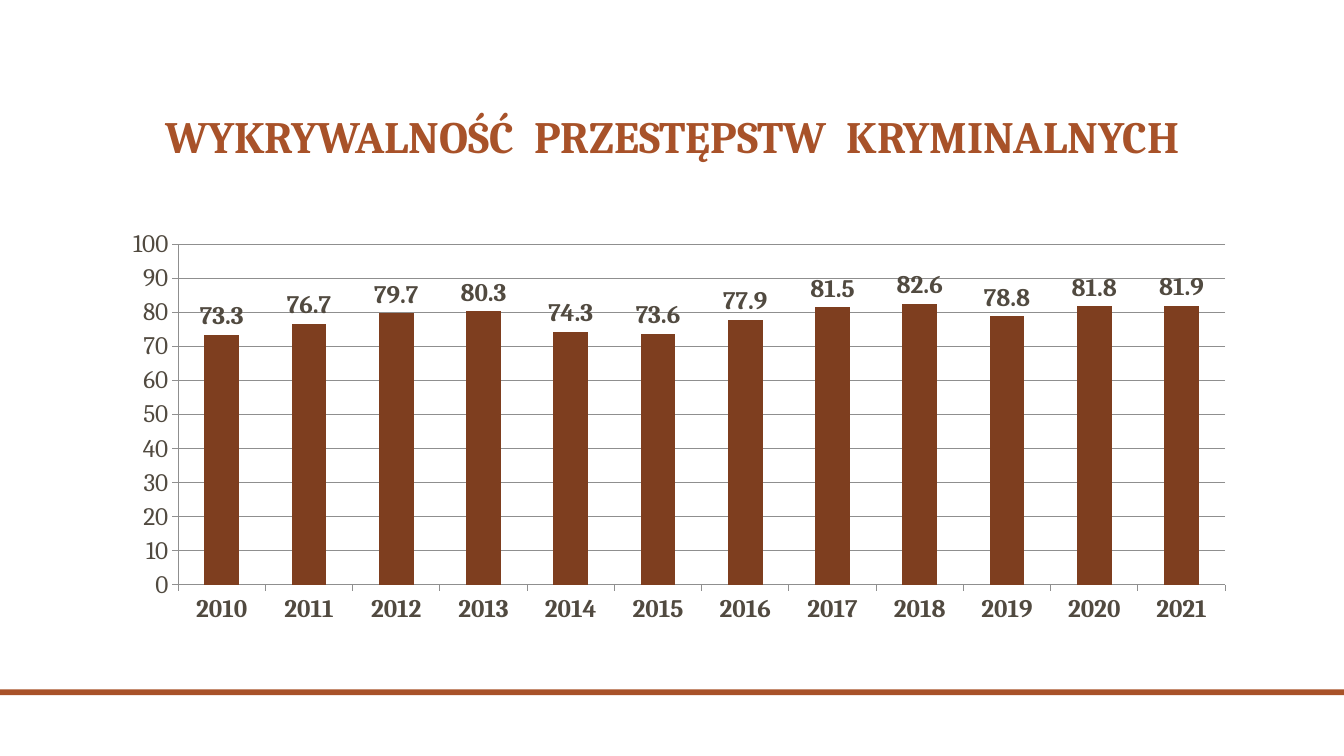
"""Build a slide with a column chart of crime detection rates by year."""
import dataclasses

import pptx
import pptx.chart.data
import pptx.dml.color
import pptx.enum.chart
import pptx.enum.shapes
import pptx.enum.text
import pptx.oxml
import pptx.oxml.ns
import pptx.util

Cm = pptx.util.Cm


@dataclasses.dataclass(frozen=True)
class Theme:
    accent: str = "A85229"
    column: str = "7E3E1F"
    text: str = "514A40"
    grid: str = "8F8F8F"
    font: str = "Cambria"
    title_size: int = 32
    chart_size: int = 18
    word_gap: int = 7


class SlideBuilder:
    def __init__(self, page, theme):
        self.page = page
        self.theme = theme

    def style(self, font, size, color, bold=False):
        font.name = self.theme.font
        font.size = pptx.util.Pt(size)
        font.bold = bold
        font.color.rgb = pptx.dml.color.RGBColor.from_string(color)

    def fill(self, target, color):
        target.fill.solid()
        target.fill.fore_color.rgb = pptx.dml.color.RGBColor.from_string(color)

    def band(self, left, top, width, height):
        band = self.page.shapes.add_shape(
            pptx.enum.shapes.MSO_SHAPE.RECTANGLE,
            Cm(left), Cm(top), Cm(width), Cm(height))
        band.shadow.inherit = False
        self.fill(band, self.theme.accent)
        band.line.fill.background()

    def title(self, words, left, top, width, height):
        box = self.page.shapes.add_textbox(Cm(left), Cm(top), Cm(width), Cm(height))
        frame = box.text_frame
        frame.word_wrap = True
        frame.vertical_anchor = pptx.enum.text.MSO_ANCHOR.BOTTOM
        para = frame.paragraphs[0]
        para.alignment = pptx.enum.text.PP_ALIGN.CENTER
        para.line_spacing = 0.9
        for index, word in enumerate(words):
            for text in ([" ", word] if index else [word]):
                span = para.add_run()
                span.text = text
                self.style(span.font, self.theme.title_size, self.theme.accent, True)
                if text == " ":
                    properties = span.font._element
                    properties.set("spc", str(self.theme.word_gap * 100))

    def axis_line(self, line):
        line.color.rgb = pptx.dml.color.RGBColor.from_string(self.theme.grid)
        line.width = pptx.util.Pt(0.75)

    def place_plot(self, chart, left, top, width, height):
        plot_area = chart.element.xpath("c:chart/c:plotArea")[0]
        for layout in plot_area.xpath("c:layout"):
            plot_area.remove(layout)
        sizes = {"x": left, "y": top, "w": width, "h": height}
        parts = '<c:layoutTarget val="inner"/><c:xMode val="edge"/><c:yMode val="edge"/>'
        parts += "".join(f'<c:{key} val="{value}"/>' for key, value in sizes.items())
        plot_area.insert(0, pptx.oxml.parse_xml(
            f'<c:layout {pptx.oxml.ns.nsdecls("c")}>'
            f"<c:manualLayout>{parts}</c:manualLayout></c:layout>"))

    def column_chart(self, rates, left, top, width, height):
        theme = self.theme
        data = pptx.chart.data.CategoryChartData(number_format="0.0")
        data.categories = list(rates)
        data.add_series("Series 1", list(rates.values()))
        chart = self.page.shapes.add_chart(
            pptx.enum.chart.XL_CHART_TYPE.COLUMN_CLUSTERED,
            Cm(left), Cm(top), Cm(width), Cm(height), data).chart
        chart.has_title = False
        chart.has_legend = False
        self.style(chart.font, theme.chart_size, theme.text)
        self.place_plot(chart, 0.06, 0.05, 0.92, 0.83)

        plot = chart.plots[0]
        plot.vary_by_categories = False
        plot.gap_width = 150
        self.fill(plot.series[0].format, theme.column)
        plot.has_data_labels = True
        labels = plot.data_labels
        labels.show_value = True
        labels.position = pptx.enum.chart.XL_LABEL_POSITION.OUTSIDE_END
        self.style(labels.font, theme.chart_size, theme.text, True)

        for axis, bold in ((chart.category_axis, True), (chart.value_axis, False)):
            axis.major_tick_mark = pptx.enum.chart.XL_TICK_MARK.OUTSIDE
            self.axis_line(axis.format.line)
            self.style(axis.tick_labels.font, theme.chart_size, theme.text, bold)
        scale = chart.value_axis
        scale.minimum_scale, scale.maximum_scale, scale.major_unit = 0, 100, 10
        scale.tick_labels.number_format = "0"
        scale.tick_labels.number_format_is_linked = False
        scale.has_major_gridlines = True
        self.axis_line(scale.major_gridlines.format.line)


def main():
    deck = pptx.Presentation()
    deck.slide_width, deck.slide_height = Cm(33.87), Cm(19.05)
    builder = SlideBuilder(deck.slides.add_slide(deck.slide_layouts[6]), Theme())
    builder.band(0, 17.37, 33.87, 0.15)
    builder.title(["WYKRYWALNOŚĆ", "PRZESTĘPSTW", "KRYMINALNYCH"],
                  3.61, 1.07, 26.67, 3.18)
    values = [73.3, 76.7, 79.7, 80.3, 74.3, 73.6,
              77.9, 81.5, 82.6, 78.8, 81.8, 81.9]
    rates = {str(year): value for year, value in enumerate(values, 2010)}
    builder.column_chart(rates, 2.77, 5.64, 28.68, 10.34)
    deck.save("out.pptx")


if __name__ == "__main__":
    main()
